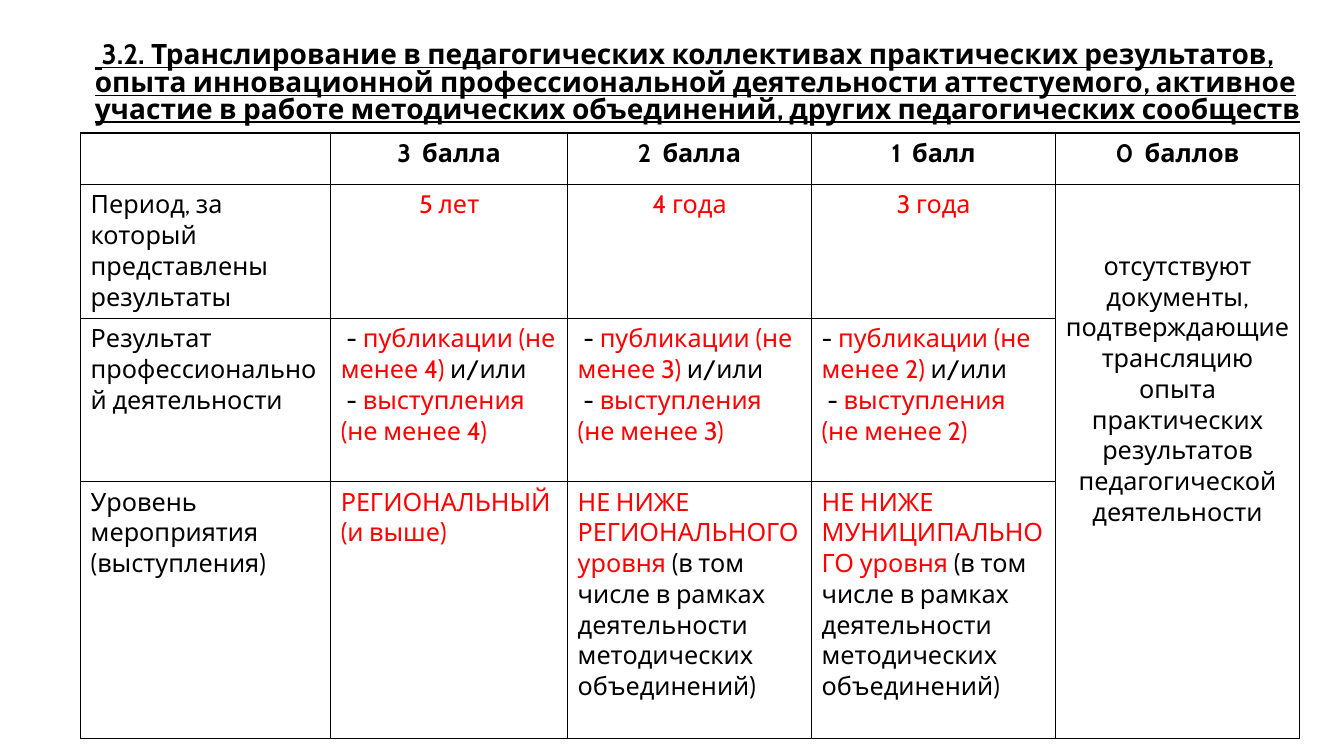
from pptx import Presentation
from pptx import oxml
from pptx.dml.color import RGBColor
from pptx.enum import text as t
from pptx.oxml import ns
from pptx.util import Inches, Pt

BLACK = RGBColor(0, 0, 0)
RED = RGBColor(255, 0, 0)
FONT = "Cabin"
MARK = "|"

TITLE = (
    "3.2. Транслирование в педагогических коллективах практических результатов, "
    "опыта инновационной профессиональной деятельности аттестуемого, активное "
    "участие в работе методических объединений, других педагогических сообществ"
)
SCOPE = "(в том числе в рамках деятельности методических объединений)"
NONE = (
    "отсутствуют документы, подтверждающие трансляцию опыта "
    "практических результатов педагогической деятельности"
)
# Text between bars is red; a line break starts a paragraph.
ROWS = [
    ["", "3  балла", "2  балла", "1  балл", "0  баллов"],
    ["Период, за который представлены результаты",
     "|5 лет|", "|4 года|", "|3 года|", NONE],
    ["Результат профессиональной деятельности",
     " - |публикации (не менее 4)| и/или\n - |выступления (не менее 4)|",
     " - |публикации (не менее 3)| и/или\n - |выступления (не менее 3)|",
     "- |публикации (не менее 2)| и/или\n - |выступления (не менее 2)|", ""],
    ["Уровень мероприятия (выступления)",
     "|РЕГИОНАЛЬНЫЙ (и выше)|",
     "|НЕ НИЖЕ РЕГИОНАЛЬНОГО уровня |" + SCOPE,
     "|НЕ НИЖЕ МУНИЦИПАЛЬНОГО уровня |" + SCOPE, ""],
]
WIDTHS = [2.48, 2.35, 2.42, 2.42, 2.42]
HEIGHTS = [0.51, 1.33, 1.62, 2.55]


def style(run, size, color=BLACK, bold=False, font=FONT):
    """Set the look of a run."""
    run.font.name = font
    run.font.size = Pt(size)
    run.font.bold = bold
    run.font.color.rgb = color


def border(cell):
    """Draw a thin black line on each side of a cell."""
    props = cell._tc.get_or_add_tcPr()
    for side in "LRTB":
        props.append(oxml.parse_xml(
            f'<a:ln{side} {ns.nsdecls("a")} w="12700"><a:solidFill>'
            f'<a:srgbClr val="{BLACK}"/></a:solidFill></a:ln{side}>'))


def fill(cell, words, bold, center):
    """Write the paragraphs of a cell with their red parts."""
    frame = cell.text_frame
    for i, line in enumerate(words.split("\n")):
        par = frame.add_paragraph() if i else frame.paragraphs[0]
        par.alignment = t.PP_ALIGN.CENTER if center else t.PP_ALIGN.LEFT
        par.font.size = Pt(18)
        for j, part in enumerate(line.split(MARK)):
            if part:
                run = par.add_run()
                run.text = part
                style(run, 18, RED if j % 2 else BLACK, bold)


def head(slide):
    """Place and format the title."""
    box = slide.shapes.title
    box.left, box.top = Inches(0.84), Inches(0.36)
    box.width, box.height = Inches(12.21), Inches(0.95)
    frame = box.text_frame
    frame.word_wrap = True
    frame.auto_size = t.MSO_AUTO_SIZE.NONE
    frame.vertical_anchor = t.MSO_ANCHOR.TOP
    par = frame.paragraphs[0]
    par.alignment = t.PP_ALIGN.LEFT
    par.line_spacing = 0.8
    par.space_before = Pt(0)
    for words, size, font in ((" ", 22, "Calibri"), (TITLE, 20, FONT)):
        run = par.add_run()
        run.text = words
        style(run, size, bold=True, font=font)
        run.font.underline = True


def grid(slide):
    """Build the table of scores."""
    table = slide.shapes.add_table(
        len(ROWS), len(WIDTHS), Inches(0.8), Inches(1.32),
        Inches(sum(WIDTHS)), Inches(sum(HEIGHTS))).table
    table.first_row = table.horz_banding = False
    for col, width in zip(table.columns, WIDTHS):
        col.width = Inches(width)
    for row, height in zip(table.rows, HEIGHTS):
        row.height = Inches(height)
    last = len(WIDTHS) - 1
    for r, row in enumerate(ROWS):
        for c, words in enumerate(row):
            cell = table.cell(r, c)
            border(cell)
            cell.fill.background()
            fill(cell, words, r == 0, r == 0 or c == last or (r == 1 and c > 0))
    none = table.cell(1, last)
    none.merge(table.cell(len(ROWS) - 1, last))
    none.margin_top = Inches(0.66)


def main():
    """Build the slide and save it."""
    deck = Presentation()
    deck.slide_width, deck.slide_height = Inches(13.33), Inches(7.5)
    slide = deck.slides.add_slide(deck.slide_layouts[5])
    head(slide)
    grid(slide)
    deck.save("out.pptx")


if __name__ == "__main__":
    main()
